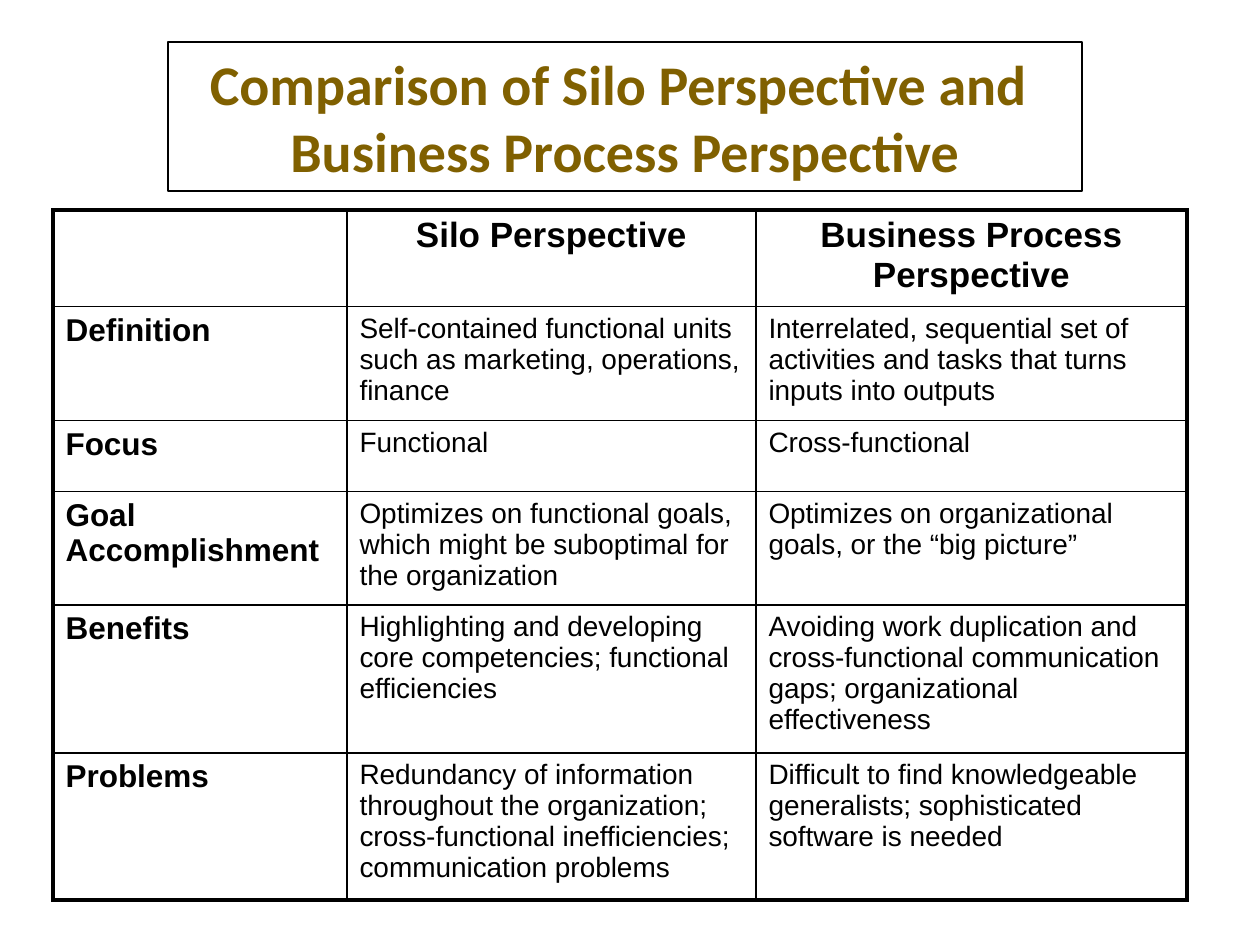
from dataclasses import dataclass
from typing import Any

from pptx import Presentation
from pptx.dml.color import RGBColor
from pptx.enum.text import MSO_ANCHOR as Anchor, MSO_AUTO_SIZE as AutoSize, PP_ALIGN as Align
from pptx.oxml.ns import qn
from pptx.util import Emu, Pt
from lxml.etree import SubElement

BLACK = RGBColor(0, 0, 0)
BROWN = RGBColor(0x80, 0x60, 0x00)
TITLE = dict(name="Calibri", size=Pt(32), bold=True)
HEADER = dict(name="Arial", size=Pt(20), bold=True)
LABEL = dict(name="Arial", size=Pt(18), bold=True)
BODY = dict(name="Arial", size=Pt(16), bold=False)
THIN, THICK = Pt(1), Pt(2.25)
COLUMN_WIDTHS = [294, 409, 431]
ROW_HEIGHTS = [96, 114, 71, 113, 148, 147]
ROWS = [
    ("", "Silo Perspective", "Business Process Perspective"),
    ("Definition",
     "Self-contained functional units such as marketing, operations, finance",
     "Interrelated, sequential set of activities and tasks that turns inputs into outputs"),
    ("Focus", "Functional", "Cross-functional"),
    ("Goal Accomplishment",
     "Optimizes on functional goals, which might be suboptimal for the organization",
     "Optimizes on organizational goals, or the “big picture”"),
    ("Benefits",
     "Highlighting and developing core competencies; functional efficiencies",
     "Avoiding work duplication and cross-functional communication gaps; "
     "organizational effectiveness"),
    ("Problems",
     "Redundancy of information throughout the organization; "
     "cross-functional inefficiencies; communication problems",
     "Difficult to find knowledgeable generalists; sophisticated software is needed"),
]


def px(value):
    return Emu(round(value * 914400 / 126))


@dataclass
class SlideBuilder:
    slide: Any
    line_color: RGBColor = BLACK

    def fill_paragraph(self, paragraph, text, style, color, align):
        paragraph.text = text
        paragraph.alignment = align
        for name, value in style.items():
            setattr(paragraph.font, name, value)
        paragraph.font.color.rgb = color

    def title(self, lines, left, top, width, height):
        shape = self.slide.shapes.title
        box = dict(left=left, top=top, width=width, height=height)
        for name, value in box.items():
            setattr(shape, name, px(value))
        shape.line.color.rgb = self.line_color
        shape.line.width = Pt(0.75)
        frame = shape.text_frame
        frame.word_wrap = True
        frame.auto_size = AutoSize.SHAPE_TO_FIT_TEXT
        frame.vertical_anchor = Anchor.MIDDLE
        for index, line in enumerate(lines):
            paragraph = frame.add_paragraph() if index else frame.paragraphs[0]
            self.fill_paragraph(paragraph, line, TITLE, BROWN, Align.CENTER)

    def borders(self, cell, widths):
        properties = cell._tc.get_or_add_tcPr()
        for position, (side, width) in enumerate(widths.items()):
            line = properties.makeelement(qn(f"a:{side}"), {"w": str(width)})
            fill = SubElement(line, qn("a:solidFill"))
            SubElement(fill, qn("a:srgbClr"), val=str(self.line_color))
            properties.insert(position, line)

    def table(self, rows, left, top, column_widths, row_heights):
        last_row, last_column = len(rows) - 1, len(column_widths) - 1
        table = self.slide.shapes.add_table(
            len(rows), len(column_widths), px(left), px(top),
            px(sum(column_widths)), px(sum(row_heights))).table
        table.first_row = False
        table.horz_banding = False
        for column, width in zip(table.columns, column_widths):
            column.width = px(width)
        for r, texts in enumerate(rows):
            table.rows[r].height = px(row_heights[r])
            for c, text in enumerate(texts):
                cell = table.cell(r, c)
                cell.fill.background()
                style = HEADER if r == 0 else LABEL if c == 0 else BODY
                align = Align.LEFT if r else Align.CENTER
                self.fill_paragraph(cell.text_frame.paragraphs[0], text, style, BLACK, align)
                self.borders(cell, {
                    "lnL": THIN if c else THICK,
                    "lnR": THICK if c == last_column else THIN,
                    "lnT": THIN if r else THICK,
                    "lnB": THICK if r == last_row else THIN,
                })


def main():
    presentation = Presentation()
    presentation.slide_width, presentation.slide_height = px(1260), px(945)
    builder = SlideBuilder(presentation.slides.add_slide(presentation.slide_layouts[5]))
    builder.title(["Comparison of Silo Perspective and ", "Business Process Perspective"],
                  168, 42, 914, 149)
    builder.table(ROWS, 53, 210, COLUMN_WIDTHS, ROW_HEIGHTS)
    presentation.save("out.pptx")


if __name__ == "__main__":
    main()
